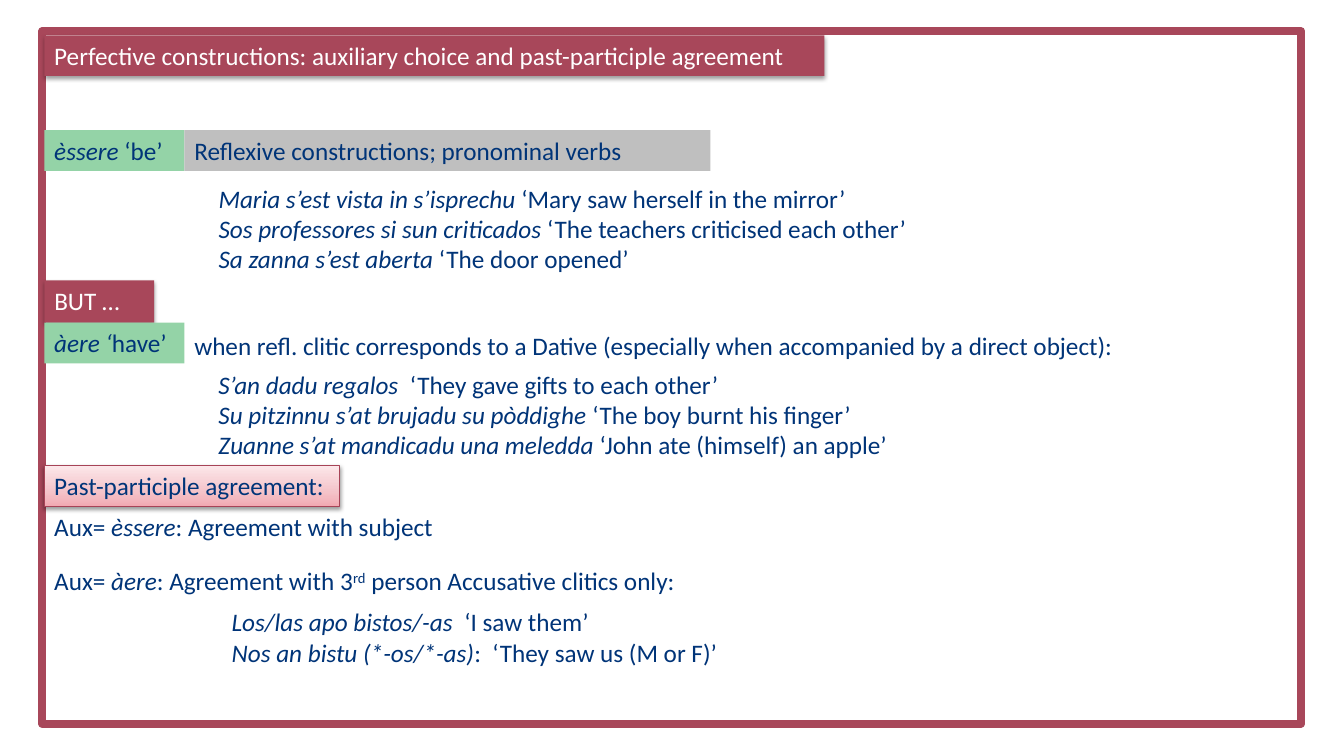
from lxml.etree import SubElement
from pptx import Presentation
from pptx.dml.color import RGBColor
from pptx.enum.shapes import MSO_SHAPE
from pptx.enum.text import MSO_ANCHOR, MSO_AUTO_SIZE, PP_ALIGN
from pptx.oxml import parse_xml
from pptx.oxml.ns import nsdecls, qn
from pptx.util import Pt

COLOURS = {
    "wine": "A8475A",
    "wine_edge": "A74357",
    "green": "94D3A7",
    "grey": "BFBFBF",
    "navy": "003478",
    "white": "FFFFFF",
}
PINK_STOPS = [(0, "F2A9B2"), (35, "F4C3C9"), (100, "FCE7EA")]
FONT_SIZE = 18
MARGIN = 31.7
LINE_HEIGHT = 29.1
EXAMPLE_LEFT = 149


def colour(name):
    """Return the named colour."""
    return RGBColor.from_string(COLOURS[name])


def add_marked_text(paragraph, marked):
    """Add text in which _ toggles italics, ^ toggles superscript and a newline breaks the line."""
    for line_number, line in enumerate(marked.split("\n")):
        if line_number:
            paragraph.add_line_break()
        for part_number, part in enumerate(line.split("_")):
            for piece_number, piece in enumerate(part.split("^")):
                if not piece:
                    continue
                run = paragraph.add_run()
                run.text = piece
                if part_number % 2:
                    run.font.italic = True
                if piece_number % 2:
                    run.font._element.set("baseline", "30000")


def write(box, paragraphs, text_colour):
    """Fill a box with left-aligned paragraphs."""
    frame = box.text_frame
    frame.word_wrap = True
    frame.auto_size = MSO_AUTO_SIZE.SHAPE_TO_FIT_TEXT
    frame.vertical_anchor = MSO_ANCHOR.TOP
    for number, marked in enumerate(paragraphs):
        paragraph = frame.add_paragraph() if number else frame.paragraphs[0]
        paragraph.alignment = PP_ALIGN.LEFT
        paragraph.font.name = "Calibri"
        paragraph.font.size = Pt(FONT_SIZE)
        paragraph.font.color.rgb = colour(text_colour)
        add_marked_text(paragraph, marked)


def add_shadow(box):
    """Give a box a soft shadow below it."""
    box._element.spPr.append(parse_xml(
        f'<a:effectLst {nsdecls("a")}>'
        '<a:outerShdw blurRad="39400" dist="20300" dir="5400000" rotWithShape="0">'
        '<a:srgbClr val="000000"><a:alpha val="38000"/></a:srgbClr>'
        '</a:outerShdw></a:effectLst>'))


def fill_pink(box):
    """Fill a box with pink that pales towards the top."""
    box.fill.gradient()
    box.fill.gradient_angle = 90
    stops = box._element.spPr.find(qn("a:gradFill")).find(qn("a:gsLst"))
    for stop in list(stops):
        stops.remove(stop)
    for position, value in PINK_STOPS:
        stop = SubElement(stops, qn("a:gs"), pos=str(position * 1000))
        SubElement(stop, qn("a:srgbClr"), val=value)


def add_label(slide, left, top, width, text, fill, text_colour="navy",
              height=LINE_HEIGHT, raised=False):
    """Add a filled label, raised by a shadow on request."""
    label = slide.shapes.add_shape(
        MSO_SHAPE.RECTANGLE, Pt(left), Pt(top), Pt(width), Pt(height))
    if fill == "pink":
        fill_pink(label)
        label.line.color.rgb = colour("wine_edge")
        label.line.width = Pt(0.75)
    else:
        label.fill.solid()
        label.fill.fore_color.rgb = colour(fill)
        label.line.fill.background()
    if raised:
        add_shadow(label)
    else:
        label.shadow.inherit = False
    write(label, [text], text_colour)


def add_text(slide, left, top, width, height, *paragraphs):
    """Add plain text in navy."""
    box = slide.shapes.add_textbox(Pt(left), Pt(top), Pt(width), Pt(height))
    write(box, paragraphs, "navy")


def add_frame(slide):
    """Add the border around the slide."""
    border = slide.shapes.add_shape(
        MSO_SHAPE.RECTANGLE, Pt(30.2), Pt(22.3), Pt(899.3), Pt(494.6))
    border.fill.background()
    border.line.color.rgb = colour("wine")
    border.line.width = Pt(5.67)
    border.shadow.inherit = False


def main():
    """Build and save the slide."""
    presentation = Presentation()
    presentation.slide_width = Pt(960)
    presentation.slide_height = Pt(540)
    slide = presentation.slides.add_slide(presentation.slide_layouts[6])

    add_frame(slide)
    add_label(slide, MARGIN, 25.2, 557.3,
              "Perfective constructions: auxiliary choice and past-participle agreement",
              "wine", "white", raised=True)

    add_label(slide, MARGIN, 92.9, 100, "_èssere _‘be’", "green")
    add_label(slide, 131.7, 92.9, 375.8,
              "Reflexive constructions; pronominal verbs", "grey")
    add_text(slide, EXAMPLE_LEFT, 127.4, 641.5, 72.7,
             "_Maria s’est vista in s’isprechu_ ‘Mary saw herself in the mirror’\n"
             "_Sos professores si sun criticados_ ‘The teachers criticised each other’",
             "_Sa zanna s’est aberta_ ‘The door opened’")

    add_label(slide, MARGIN, 200.2, 78.5, "BUT …", "wine", "white",
              height=30.2, raised=True)
    add_label(slide, MARGIN, 230.4, 100, "_àere ‘_have’", "green")
    add_text(slide, 131.7, 232.4, 713.5, LINE_HEIGHT,
             "when refl. clitic corresponds to a Dative "
             "(especially when accompanied by a direct object):")
    add_text(slide, EXAMPLE_LEFT, 259.9, 616.3, 72.7,
             "_S’an dadu regalos  _‘They gave gifts to each other’",
             "_Su pitzinnu s’at brujadu su pòddighe_ ‘The boy burnt his finger’\n"
             "_Zuanne s’at mandicadu una meledda_ ‘John ate (himself) an apple’")

    add_label(slide, MARGIN, 332.6, 211, "Past-participle agreement:", "pink",
              raised=True)
    add_text(slide, MARGIN, 361.4, 895.7, LINE_HEIGHT,
             "Aux= _èssere_: Agreement with subject")
    add_text(slide, MARGIN, 400.3, 895.7, LINE_HEIGHT,
             "Aux= _àere_: Agreement with 3^rd^ person Accusative clitics only:")
    add_text(slide, 158.4, 429.8, 513.4, 51,
             "_Los/las apo bistos/-as_  ‘I saw them’\n"
             "_Nos an bistu (*-os/*-as)_:  ‘They saw us (M or F)’")

    presentation.save("out.pptx")


if __name__ == "__main__":
    main()
